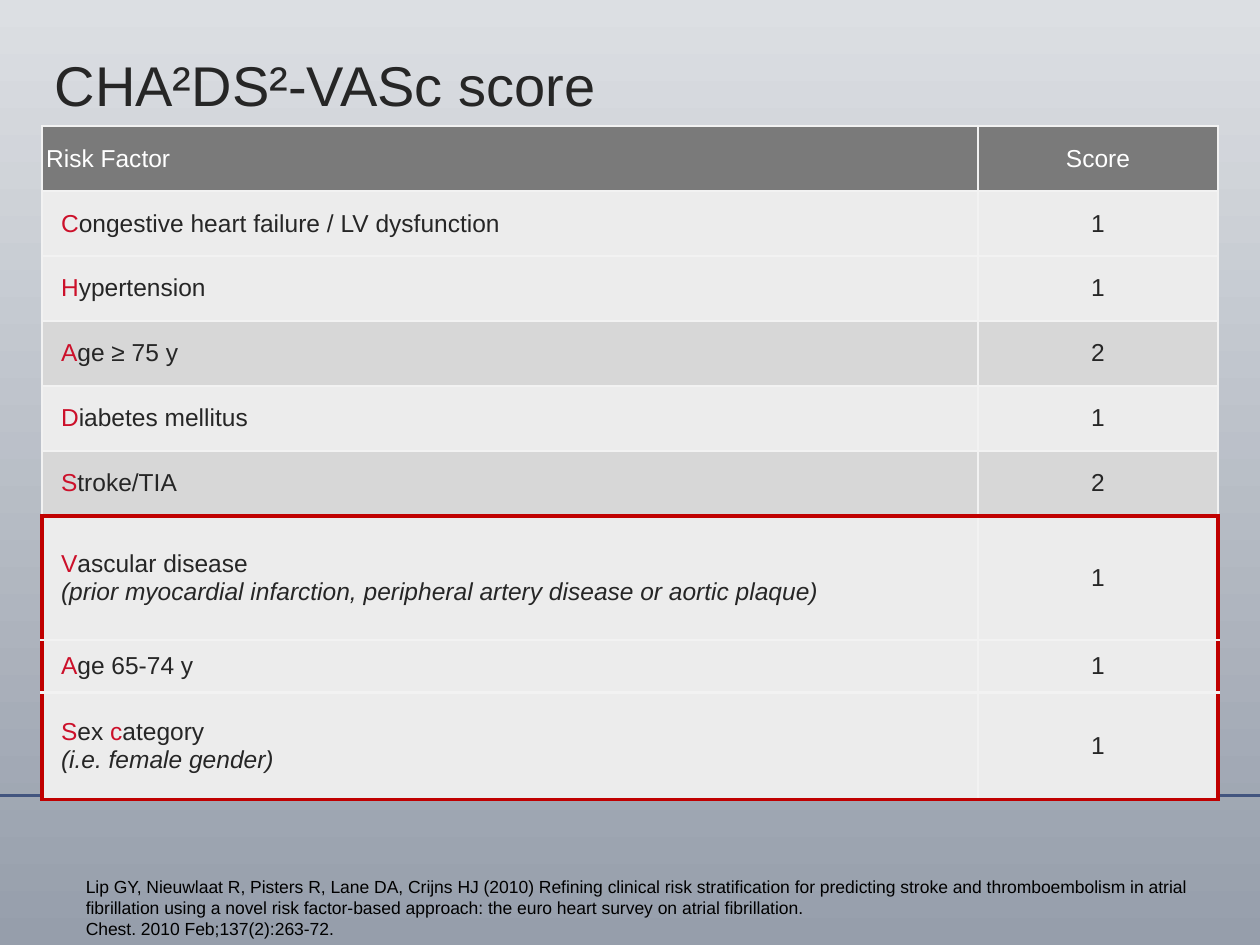
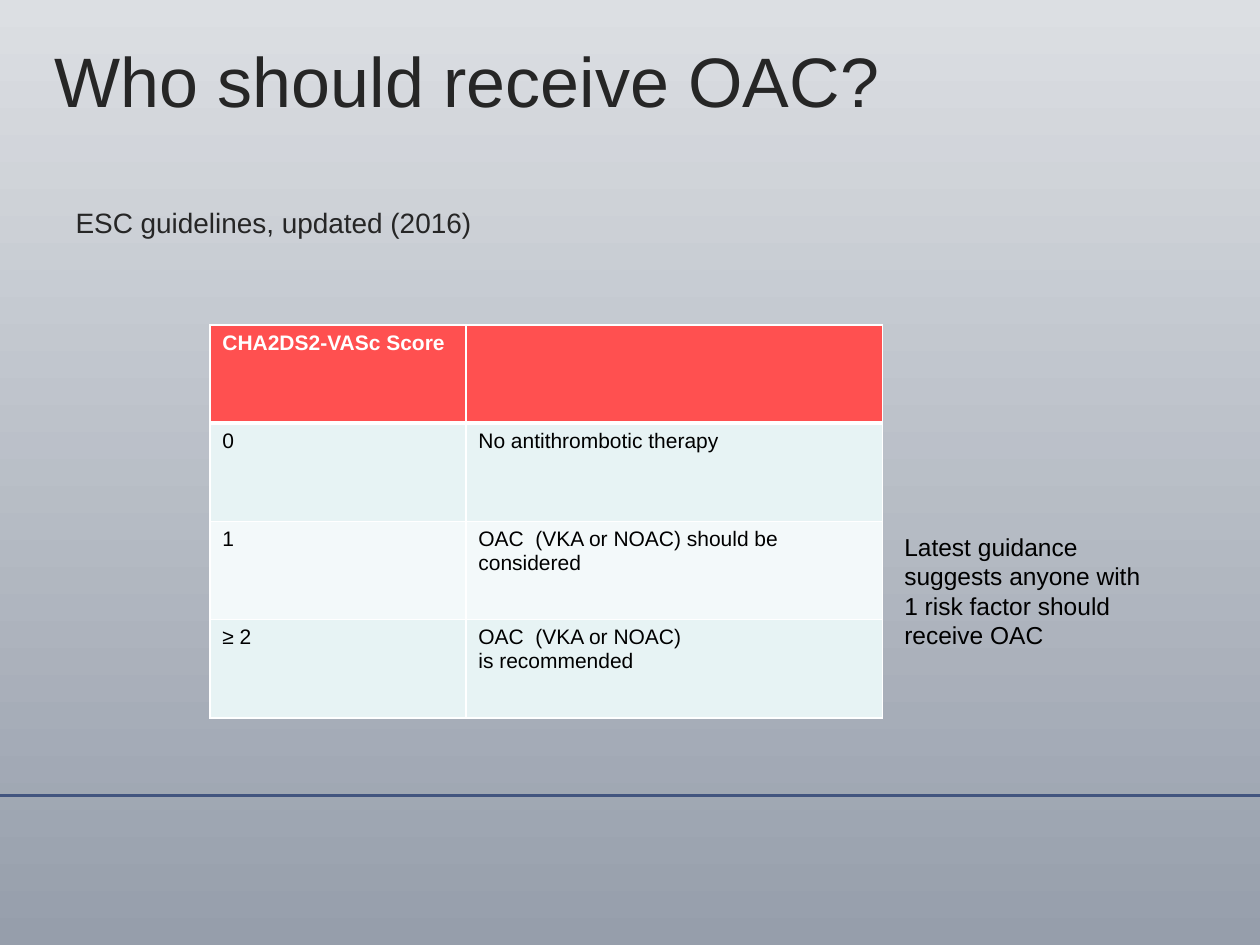
"""Builds two slides on stroke risk scoring and anticoagulation."""
from lxml import etree
from pptx import Presentation
from pptx.dml.color import RGBColor
from pptx.enum.shapes import MSO_CONNECTOR
from pptx.enum.text import MSO_ANCHOR, MSO_AUTO_SIZE, PP_ALIGN
from pptx.oxml.ns import qn
from pptx.util import Cm, Pt

STRAIGHT = MSO_CONNECTOR.STRAIGHT
MIDDLE, TOP = MSO_ANCHOR.MIDDLE, MSO_ANCHOR.TOP
LEFT, CENTER = PP_ALIGN.LEFT, PP_ALIGN.CENTER
FIXED = MSO_AUTO_SIZE.NONE

FONT = "Arial"
WIDTH, HEIGHT = 25.4, 19.05
TITLE_ONLY, TITLE_AND_BODY = 5, 1
COLORS = {
    "sky": "DCDFE3", "ground": "969EAB", "rule": "42557F",
    "ink": "262626", "black": "000000", "white": "FFFFFF",
    "initial": "CC102A", "frame": "C00000", "grid": "F2F2F2",
    "header": "7A7A7A", "one_point": "ECECEC", "two_points": "D7D7D7",
    "coral": "FF5050", "mint": "E7F3F4", "ice": "F3F9FA",
}

RISK_FACTORS = [
    ("|C|ongestive heart failure / LV dysfunction", 1, 1.31),
    ("|H|ypertension", 1, 1.31),
    ("|A|ge ≥ 75 y", 2, 1.31),
    ("|D|iabetes mellitus", 1, 1.31),
    ("|S|troke/TIA", 2, 1.31),
    ("|V|ascular disease\n(prior myocardial infarction, peripheral artery "
     "disease or aortic plaque)", 1, 2.5),
    ("|A|ge 65-74 y", 1, 1.06),
    ("|S|ex |c|ategory\n(i.e. female gender)", 1, 2.16),
]
FIRST_FRAMED = 6
REFERENCE = (
    "Lip GY, Nieuwlaat R, Pisters R, Lane DA, Crijns HJ (2010) Refining clinical "
    "risk stratification for predicting stroke and thromboembolism in atrial "
    "fibrillation using a novel risk factor-based approach: the euro heart survey "
    "on atrial fibrillation.\nChest. 2010 Feb;137(2):263-72."
)
THERAPIES = [
    ("CHA2DS2-VASc Score", ""),
    ("0", "No antithrombotic therapy"),
    ("1", "OAC  (VKA or NOAC) should be considered"),
    ("≥ 2", "OAC  (VKA or NOAC)\nis recommended"),
]


def rgb(name):
    """Return the named colour."""
    return RGBColor.from_string(COLORS[name])


class SlideBuilder:
    """Holds the shared style and the slide being built."""

    def __init__(self, deck):
        """Set the page size and the background of every slide."""
        self.deck = deck
        self.page = None
        deck.slide_width, deck.slide_height = Cm(WIDTH), Cm(HEIGHT)
        fill = deck.slide_master.background.fill
        fill.gradient()
        fill.gradient_angle = 270
        for stop, color in zip(fill.gradient_stops, ("sky", "ground")):
            stop.color.rgb = rgb(color)

    def start(self, layout, title, size, height):
        """Add a slide with the rule and a title."""
        self.page = self.deck.slides.add_slide(self.deck.slide_layouts[layout])
        rule = self.page.shapes.add_connector(
            STRAIGHT, 0, Cm(16.03), Cm(WIDTH), Cm(16.03))
        rule.line.color.rgb = rgb("rule")
        rule.line.width = Pt(1.75)
        etree.SubElement(rule._element.spPr, qn("a:effectLst"))
        tree = self.page.shapes._spTree
        tree.remove(rule._element)
        tree.insert(2, rule._element)
        self.place(self.page.shapes.title, 0.85, 0.85, 23.7, height)
        frame = self.page.shapes.title.text_frame
        frame.vertical_anchor = MIDDLE
        self.set_text(frame, title, size)

    def place(self, box, left, top, width, height):
        """Move a placeholder and keep its text at full size."""
        box.left, box.top = Cm(left), Cm(top)
        box.width, box.height = Cm(width), Cm(height)
        box.text_frame.auto_size = FIXED

    def set_text(self, frame, text, size, color="ink", align=LEFT,
                 bold=False, italic_detail=False):
        """Set one paragraph a line, with |marked| letters highlighted."""
        for number, line in enumerate(text.split("\n")):
            para = frame.add_paragraph() if number else frame.paragraphs[0]
            para.alignment = align
            para.space_before = Pt(0)
            for position, part in enumerate(line.split("|")):
                if part:
                    span = para.add_run()
                    span.text = part
                    if position % 2:
                        span.font.color.rgb = rgb("initial")
            font = para.font
            font.name, font.size, font.bold = FONT, Pt(size), bold
            font.italic = italic_detail and number > 0
            font.color.rgb = rgb(color)

    def body(self, text, size, left, top, width, height):
        """Fill the body placeholder with one unbulleted paragraph."""
        box = self.page.placeholders[1]
        self.place(box, left, top, width, height)
        para = box.text_frame.paragraphs[0]
        para.space_before = Pt(0)
        properties = para._p.get_or_add_pPr()
        properties.set("marL", "0")
        properties.set("indent", "0")
        etree.SubElement(properties, qn("a:buNone"))
        self.set_text(box.text_frame, text, size)

    def text(self, text, size, left, top, width, height):
        """Add a wrapped text box."""
        box = self.page.shapes.add_textbox(Cm(left), Cm(top), Cm(width), Cm(height))
        box.text_frame.word_wrap = True
        self.set_text(box.text_frame, text, size, "black")

    def table(self, left, top, widths, heights):
        """Add a plain table of the given column widths and row heights."""
        table = self.page.shapes.add_table(
            len(heights), len(widths), Cm(left), Cm(top),
            Cm(sum(widths)), Cm(sum(heights))).table
        table.first_row = table.horz_banding = False
        for column, width in zip(table.columns, widths):
            column.width = Cm(width)
        for row, height in zip(table.rows, heights):
            row.height = Cm(height)
        return table

    def cell(self, cell, text, size, fill, borders, anchor=TOP, **style):
        """Fill a table cell, given (colour, points) for each side."""
        properties = cell._tc.get_or_add_tcPr()
        for side in "LRTB":
            color, points = borders[side]
            line = etree.SubElement(
                properties, qn(f"a:ln{side}"), w=str(Pt(points)))
            solid = etree.SubElement(line, qn("a:solidFill"))
            etree.SubElement(solid, qn("a:srgbClr"), val=COLORS[color])
        cell.fill.solid()
        cell.fill.fore_color.rgb = rgb(fill)
        cell.vertical_anchor = anchor
        self.set_text(cell.text_frame, text, size, **style)


def build_score(builder):
    """Build the slide that lists the risk factors."""
    builder.start(TITLE_ONLY, "CHA²DS²-VASc score", 32, 1.7)
    rows = [("Risk Factor", "Score", 1.31)] + RISK_FACTORS
    table = builder.table(0.85, 2.54, (18.87, 4.83), [row[2] for row in rows])
    last = len(rows) - 1
    for number, (factor, score, _) in enumerate(rows):
        header, framed = number == 0, number >= FIRST_FRAMED
        fill = "header" if header else "two_points" if score == 2 else "one_point"
        for column, text in enumerate((factor, str(score))):
            red_sides = {
                "L": framed and column == 0,
                "R": framed and column == 1,
                "T": number == FIRST_FRAMED,
                "B": number in (FIRST_FRAMED - 1, last),
            }
            borders = {side: ("frame", 2.25) if red else ("grid", 1.5)
                       for side, red in red_sides.items()}
            cell = table.cell(number, column)
            cell.margin_left = cell.margin_right = Cm(0.08)
            cell.margin_top = cell.margin_bottom = Cm(0.08)
            if column == 0 and not header:
                cell.margin_left = Cm(0.38)
            builder.cell(cell, text, 14, fill, borders, MIDDLE,
                         color="white" if header else "ink",
                         align=CENTER if column else LEFT, italic_detail=True)
    builder.text(REFERENCE, 10, 1.48, 17.53, 22.8, 1.52)


def build_therapy(builder):
    """Build the slide that maps scores to therapy."""
    builder.start(TITLE_AND_BODY, "Who should receive OAC?", 40, 1.5)
    builder.body("ESC guidelines, updated (2016)", 16, 1.27, 4.01, 22.86, 13)
    table = builder.table(4.23, 6.55, (5.16, 8.4), [1.98] * len(THERAPIES))
    for number, texts in enumerate(THERAPIES):
        header = number == 0
        fill = "coral" if header else "mint" if number % 2 else "ice"
        borders = dict.fromkeys("LRTB", ("white", 1))
        if number < 2:
            borders["B" if header else "T"] = ("white", 3)
        for column, text in enumerate(texts):
            builder.cell(table.cell(number, column), text, 12, fill, borders,
                         color="white" if header else "black", bold=header)
    builder.text("Latest guidance suggests anyone with 1 risk factor should "
                 "receive OAC", 14, 17.98, 10.6, 5.5, 2.62)


def main():
    """Build and save the deck."""
    deck = Presentation()
    builder = SlideBuilder(deck)
    build_score(builder)
    build_therapy(builder)
    deck.save("out.pptx")


if __name__ == "__main__":
    main()
